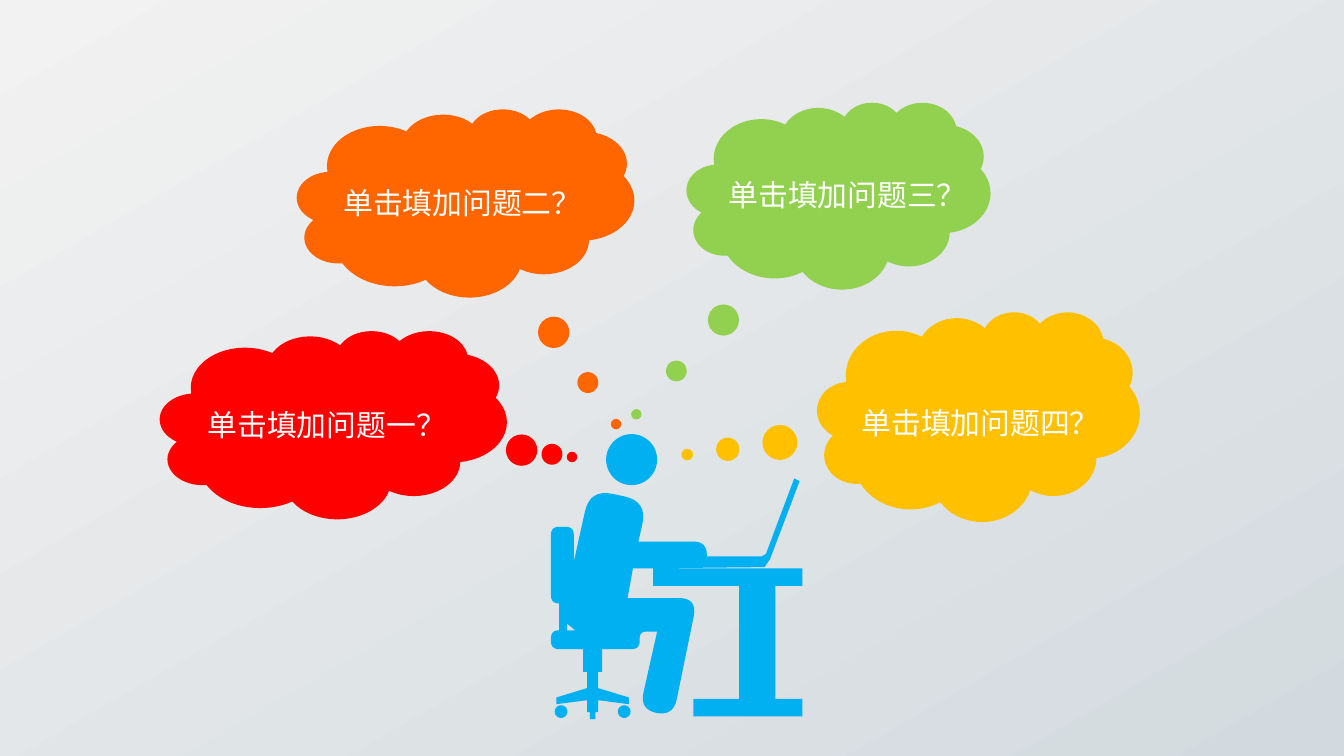
"""Builds a slide of a person at a desk with four thought clouds."""
import math

from lxml import etree
from pptx import Presentation
from pptx import util as u
from pptx.dml.color import RGBColor
from pptx.enum import shapes, text
from pptx.oxml.ns import qn

FONT = "Noto Sans CJK SC"
SLIDE = (720, 405)
GRID = 0.72
BACKGROUND = ("F2F2F2", "D3DADF")
PERSON_COLOUR = "00B0F0"
TEXT_FORMAT = {
    "word_wrap": False,
    "vertical_anchor": text.MSO_ANCHOR.BOTTOM,
    "margin_left": u.Pt(0),
    "margin_top": u.Pt(2),
    "margin_right": u.Pt(2),
    "margin_bottom": u.Pt(21),
}
CLOUDS = [
    ("单击填加问题三？", "92D050", (367.9, 54.7, 162.7, 100.1), (-0.666, 1.171)),
    ("单击填加问题一？", "FF0000", (85.7, 177.1, 185.8, 100.8), (0.688, 0.172)),
    ("单击填加问题四？", "FFC000", (437.8, 167, 172.8, 112.3), (-0.903, 0.182)),
    ("单击填加问题二？", "FF6600", (159.1, 58.3, 180.7, 100.8), (0.446, 1.176)),
]

AXIS = 441
HEAD = (470, 342, 19)
WHEEL_OFFSET, WHEEL_Y, WHEEL_RADIUS = 23.5, 529.5, 4.7
CHAIR_BACK = [(410, 449, 6), (410, 392, 6), (427, 392, 6), (427, 418)]
TORSO_AND_ARM = [(439, 364, 17), (482, 373, 18), (475, 403), (526, 403, 10), (526, 414)]
LAPTOP = [(567, 414), (570, 412), (591, 356), (595, 358), (573, 416), (569, 422)]
LEG = [(471, 423), (467, 445), (519, 445, 14), (501, 533, 13), (476, 528, 13), (489, 470)]
SEAT_RIGHT = [(476, 470, 5), (476, 483, 6)]
SEAT_LEFT = [(410, 483, 6), (410, 469, 6), (416, 469), (416, 449)]
STAND = [(7, 483), (7, 500), (4, 500), (4, 512), (27, 519), (27, 524),
         (4, 521), (4, 530), (2, 530), (2, 535)]
CHAIR_GAP = [(422, 464), (428, 469), (422, 469)]
DESK = [(486, 423, 597, 436), (550, 436, 577, 520), (516, 520, 597, 533)]


def rgb(colour):
    return RGBColor.from_string(colour)


def paint(shape, colour):
    shape.shadow.inherit = False
    shape.fill.solid()
    shape.fill.fore_color.rgb = rgb(colour)
    shape.line.fill.background()


def circle(x, y, radius, steps=40):
    angles = [math.tau * step / steps for step in range(steps)]
    return [(x + radius * math.cos(a), y + radius * math.sin(a)) for a in angles]


def rectangle(left, top, right, bottom):
    return [(left, top), (right, top), (right, bottom), (left, bottom)]


def toward(start, end, distance):
    share = distance / math.dist(start, end)
    return tuple(a + (b - a) * share for a, b in zip(start, end))


def rounded(corners, steps=8):
    """Replace each corner that has a radius by a short curve."""
    points = []
    for index, (x, y, *radius) in enumerate(corners):
        corner = (x, y)
        if not radius:
            points.append(corner)
            continue
        before = toward(corner, corners[index - 1][:2], radius[0])
        after = toward(corner, corners[(index + 1) % len(corners)][:2], radius[0])
        for step in range(steps + 1):
            t = step / steps
            points.append(tuple(
                (1 - t) ** 2 * a + 2 * t * (1 - t) * c + t * t * b
                for a, c, b in zip(before, corner, after)))
    return points


def person_contours():
    stand = [(AXIS + x, y) for x, y in STAND]
    stand += [(AXIS - x, y) for x, y in reversed(STAND)]
    body = (CHAIR_BACK + TORSO_AND_ARM + LAPTOP + LEG
            + SEAT_RIGHT + stand + SEAT_LEFT)
    wheels = [circle(AXIS + side * WHEEL_OFFSET, WHEEL_Y, WHEEL_RADIUS) for side in (-1, 1)]
    desk = [rectangle(*part) for part in DESK]
    return [circle(*HEAD), rounded(body), CHAIR_GAP, *wheels, *desk]


def add_person(slide):
    first, *others = [
        [tuple(u.Pt(GRID * value) for value in point) for point in contour]
        for contour in person_contours()]
    builder = slide.shapes.build_freeform(*first[0])
    builder.add_line_segments(first[1:], close=True)
    for points in others:
        builder.move_to(*points[0])
        builder.add_line_segments(points[1:], close=True)
    paint(builder.convert_to_shape(), PERSON_COLOUR)


def add_cloud(slide, question, colour, box, tail):
    cloud = slide.shapes.add_shape(
        shapes.MSO_SHAPE.CLOUD_CALLOUT, *(u.Pt(length) for length in box))
    paint(cloud, colour)
    for index, value in enumerate(tail):
        cloud.adjustments[index] = value
    frame = cloud.text_frame
    for name, value in TEXT_FORMAT.items():
        setattr(frame, name, value)
    paragraph = frame.paragraphs[0]
    paragraph.alignment = text.PP_ALIGN.LEFT
    run = paragraph.add_run()
    run.text = question
    run.font.size = u.Pt(16)
    run.font.color.rgb = rgb("FFFFFF")
    run.font.name = FONT
    etree.SubElement(run.font._element, qn("a:ea"), typeface=FONT)


def main():
    deck = Presentation()
    deck.slide_width, deck.slide_height = (u.Pt(length) for length in SLIDE)
    slide = deck.slides.add_slide(deck.slide_layouts[6])
    backdrop = slide.background.fill
    backdrop.gradient()
    backdrop.gradient_angle = 300
    for stop, colour in zip(backdrop.gradient_stops, BACKGROUND):
        stop.color.rgb = rgb(colour)
    for cloud in CLOUDS[:2]:
        add_cloud(slide, *cloud)
    add_person(slide)
    for cloud in CLOUDS[2:]:
        add_cloud(slide, *cloud)
    deck.save("out.pptx")


if __name__ == "__main__":
    main()
